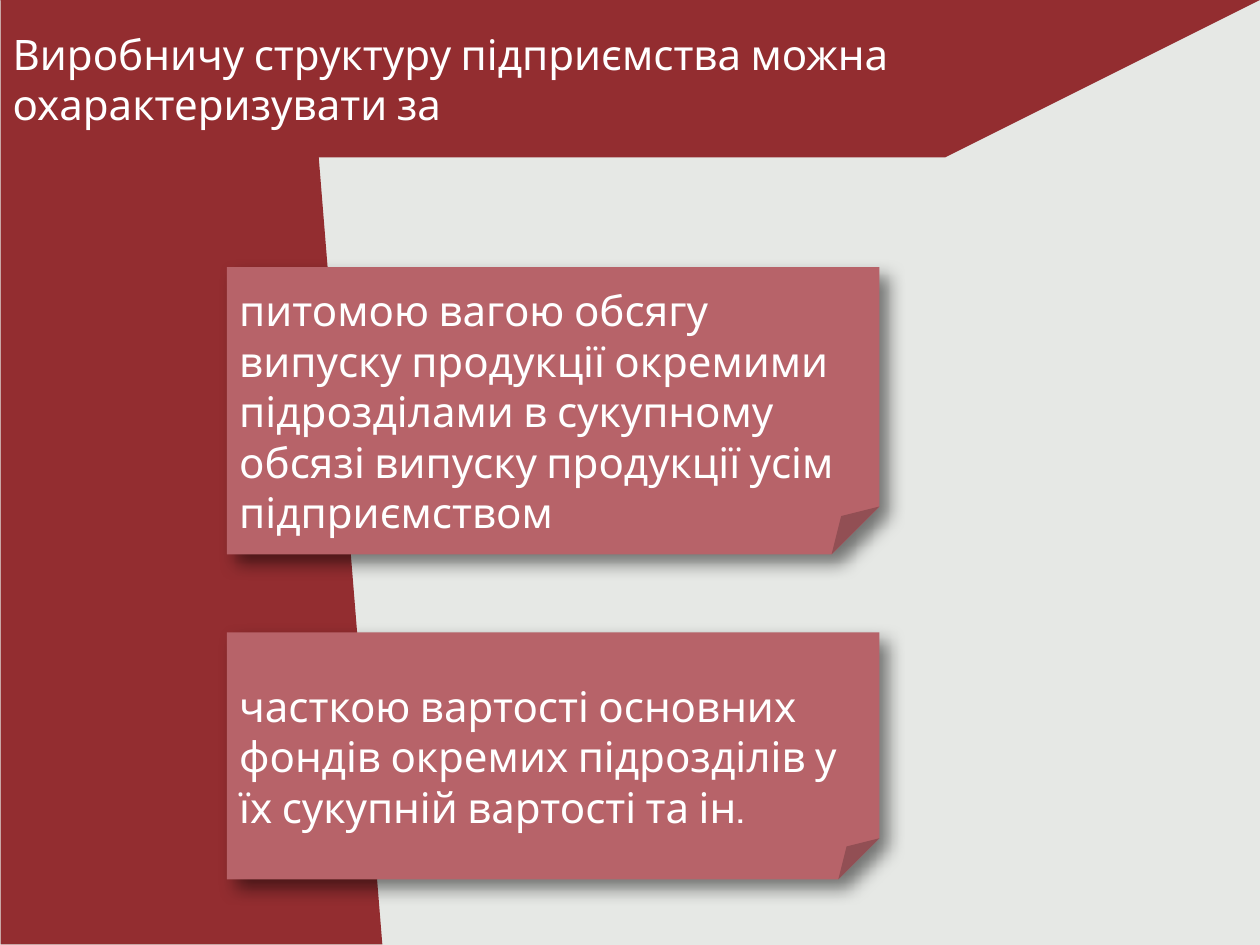
from dataclasses import dataclass

import pptx
import pptx.dml.color
import pptx.enum.shapes
import pptx.enum.text
import pptx.oxml
import pptx.oxml.ns
import pptx.util
from pptx.dml.color import RGBColor
from pptx.enum.shapes import MSO_SHAPE
from pptx.util import Inches

PALE = RGBColor(0xE6, 0xE8, 0xE5)
CRIMSON = RGBColor(0x93, 0x2D, 0x30)
ROSE = RGBColor(0xB7, 0x63, 0x69)
WHITE = RGBColor(0xFF, 0xFF, 0xFF)
FONT = "Cabin"
CARD_LEFT, CARD_WIDTH = 1.8, 5.18
SHADOW = (
    f"<a:effectLst {pptx.oxml.ns.nsdecls('a')}>"
    '<a:outerShdw blurRad="127000" dist="90000" dir="2700000" algn="tl" rotWithShape="0">'
    '<a:srgbClr val="000000"><a:alpha val="50000"/></a:srgbClr>'
    "</a:outerShdw></a:effectLst>"
)


@dataclass
class Card:
    top: float
    height: float
    text: str


CARDS = [
    Card(2.12, 2.28, "питомою вагою обсягу випуску продукції окремими підрозділами "
                     "в сукупному обсязі випуску продукції усім підприємством"),
    Card(5.02, 1.96, "часткою вартості основних фондів окремих підрозділів "
                     "у їх сукупній вартості та ін."),
]


def add_panel(page, kind: MSO_SHAPE, left: float, top: float, width: float,
              height: float, color: RGBColor):
    panel = page.shapes.add_shape(
        kind, Inches(left), Inches(top), Inches(width), Inches(height))
    panel.shadow.inherit = False
    panel.fill.solid()
    panel.fill.fore_color.rgb = color
    panel.line.fill.background()
    return panel


def write_text(box, text: str) -> None:
    frame = box.text_frame
    frame.word_wrap = True
    frame.auto_size = pptx.enum.text.MSO_AUTO_SIZE.NONE
    frame.vertical_anchor = pptx.enum.text.MSO_ANCHOR.MIDDLE
    para = frame.paragraphs[0]
    para.alignment = pptx.enum.text.PP_ALIGN.LEFT
    span = para.add_run()
    span.text = text
    span.font.name = FONT
    span.font.size = pptx.util.Pt(24)
    span.font.color.rgb = WHITE


def add_card(page, card: Card) -> None:
    area = (CARD_LEFT, card.top, CARD_WIDTH, card.height)
    note = add_panel(page, MSO_SHAPE.FOLDED_CORNER, *area, ROSE)
    properties = note._element.spPr
    properties.remove(properties.find(pptx.oxml.ns.qn("a:effectLst")))
    properties.append(pptx.oxml.parse_xml(SHADOW))
    write_text(page.shapes.add_textbox(*map(Inches, area)), card.text)


def main() -> None:
    deck = pptx.Presentation()
    deck.slide_width, deck.slide_height = Inches(10), Inches(7.5)
    page = deck.slides.add_slide(deck.slide_layouts[5])
    page.background.fill.solid()
    page.background.fill.fore_color.rgb = PALE

    header = add_panel(page, MSO_SHAPE.TRAPEZOID, 0, 0, 10, 1.25, CRIMSON)
    header.adjustments[0] = 2
    header._element.spPr.xfrm.set("flipV", "1")

    side = add_panel(page, MSO_SHAPE.FLOWCHART_MANUAL_INPUT, -2.23, 2.23, 7.5, 3.03, CRIMSON)
    side.rotation = 270
    side._element.spPr.xfrm.set("flipH", "1")
    side._element.spPr.xfrm.set("flipV", "1")

    title = page.shapes.title
    title.left, title.top = Inches(0), Inches(0)
    title.width, title.height = Inches(10), Inches(1.25)
    write_text(title, "Виробничу структуру підприємства можна охарактеризувати за")
    page.shapes._spTree.append(title._element)

    for card in CARDS:
        add_card(page, card)

    deck.save("out.pptx")


if __name__ == "__main__":
    main()
